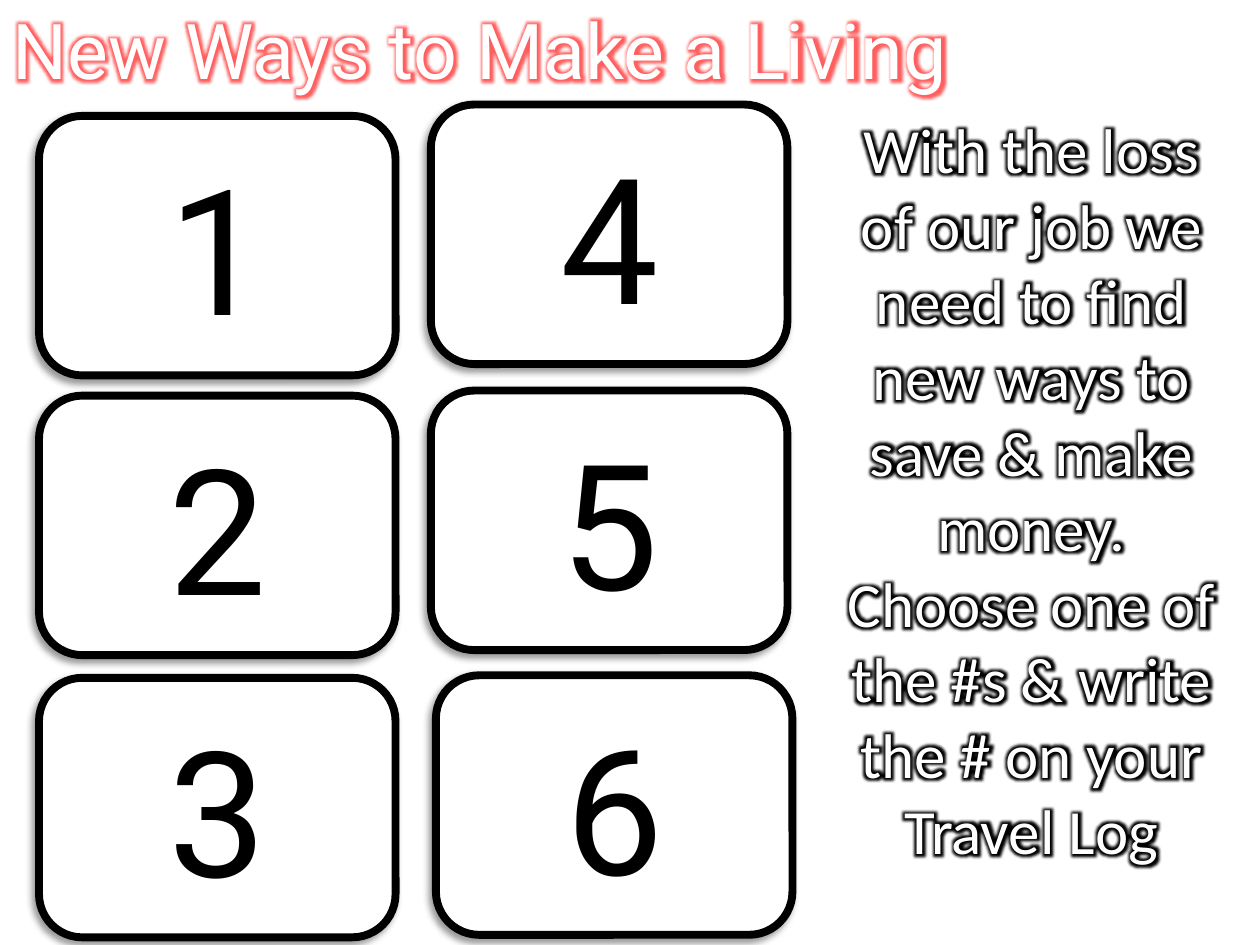
from lxml import etree
from pptx import Presentation
from pptx.dml.color import RGBColor
from pptx.enum.shapes import MSO_SHAPE
from pptx.enum.text import MSO_ANCHOR, MSO_AUTO_SIZE, PP_ALIGN
from pptx.oxml.ns import qn
from pptx.util import Inches, Pt

LEFT, CENTER = PP_ALIGN.LEFT, PP_ALIGN.CENTER
TOP, MIDDLE = MSO_ANCHOR.TOP, MSO_ANCHOR.MIDDLE
FIXED, GROW = MSO_AUTO_SIZE.NONE, MSO_AUTO_SIZE.SHAPE_TO_FIT_TEXT
ROUNDED = MSO_SHAPE.ROUNDED_RECTANGLE
BLACK = RGBColor(0, 0, 0)
WHITE = RGBColor(255, 255, 255)
RED = RGBColor(255, 0, 0)

TITLE = "New Ways to Make a Living"
STORY = ("With the loss of our job we need to find new ways to save & make money. "
         "Choose one of the #s & write the # on your Travel Log")
CARD_W, CARD_H = 2.83, 2.06
# Each column lists (number, left, top) from top to bottom
CARDS = [
    [("1", 0.31, 0.92), ("2", 0.31, 3.14), ("3", 0.31, 5.38)],
    [("4", 3.42, 0.83), ("5", 3.42, 3.1), ("6", 3.46, 5.36)],
]


def place(shape, left, top, width, height):
    box = {"left": left, "top": top, "width": width, "height": height}
    for name, value in box.items():
        setattr(shape, name, Inches(value))


def add_effect(parent, kind, color, alpha, **attrs):
    """Return an effect list holding one glow or shadow; alpha is a percentage."""
    effects = etree.SubElement(parent, qn("a:effectLst"))
    effect = etree.SubElement(effects, qn(f"a:{kind}"),
                              {k: str(v) for k, v in attrs.items()})
    rgb = etree.SubElement(effect, qn("a:srgbClr"), val=str(color))
    etree.SubElement(rgb, qn("a:alpha"), val=str(alpha * 1000))
    return effects


def write(shape, text, size, font, color, align, anchor, auto_size=FIXED):
    tf = shape.text_frame
    frame = {"word_wrap": True, "auto_size": auto_size, "vertical_anchor": anchor}
    for name, value in frame.items():
        setattr(tf, name, value)
    p = tf.paragraphs[0]
    p.alignment = align
    r = p.add_run()
    r.text = text
    r.font.size, r.font.name = Pt(size), font
    r.font.color.rgb = color
    return r


def add_glow(run, color, alpha, radius):
    fill = run.font.fill._xPr.find(qn("a:solidFill"))
    fill.addnext(add_effect(fill.getparent(), "glow", color, alpha, rad=Pt(radius)))


def add_card(slide, number, left, top):
    s = slide.shapes.add_shape(ROUNDED, 0, 0, 0, 0)
    place(s, left, top, CARD_W, CARD_H)
    s.fill.solid()
    s.fill.fore_color.rgb = WHITE
    s.line.color.rgb = BLACK
    s.line.width = Pt(4.5)
    add_effect(s._element.spPr, "outerShdw", BLACK, 40, blurRad=Pt(4),
               dist=Pt(3), dir=135 * 60000, algn="tr", rotWithShape=0)
    write(s, number, 100, "Roboto", BLACK, CENTER, MIDDLE)


def main():
    prs = Presentation()
    prs.slide_width, prs.slide_height = Inches(10), Inches(7.5)
    slide = prs.slides.add_slide(prs.slide_layouts[5])

    for column in CARDS:
        for card in column:
            add_card(slide, *card)

    title = slide.shapes.title
    place(title, 0, -0.24, 9.14, 1.25)
    r = write(title, TITLE, 44, "Roboto", WHITE, LEFT, MIDDLE)
    add_glow(r, RED, 63, 8)

    story = slide.shapes.add_textbox(0, 0, 0, 0)
    place(story, 6.6, 0.83, 3.17, 6.16)
    r = write(story, STORY, 36, "Calibri", WHITE, CENTER, TOP, GROW)
    add_glow(r, BLACK, 100, 8)

    prs.save("out.pptx")


if __name__ == "__main__":
    main()
